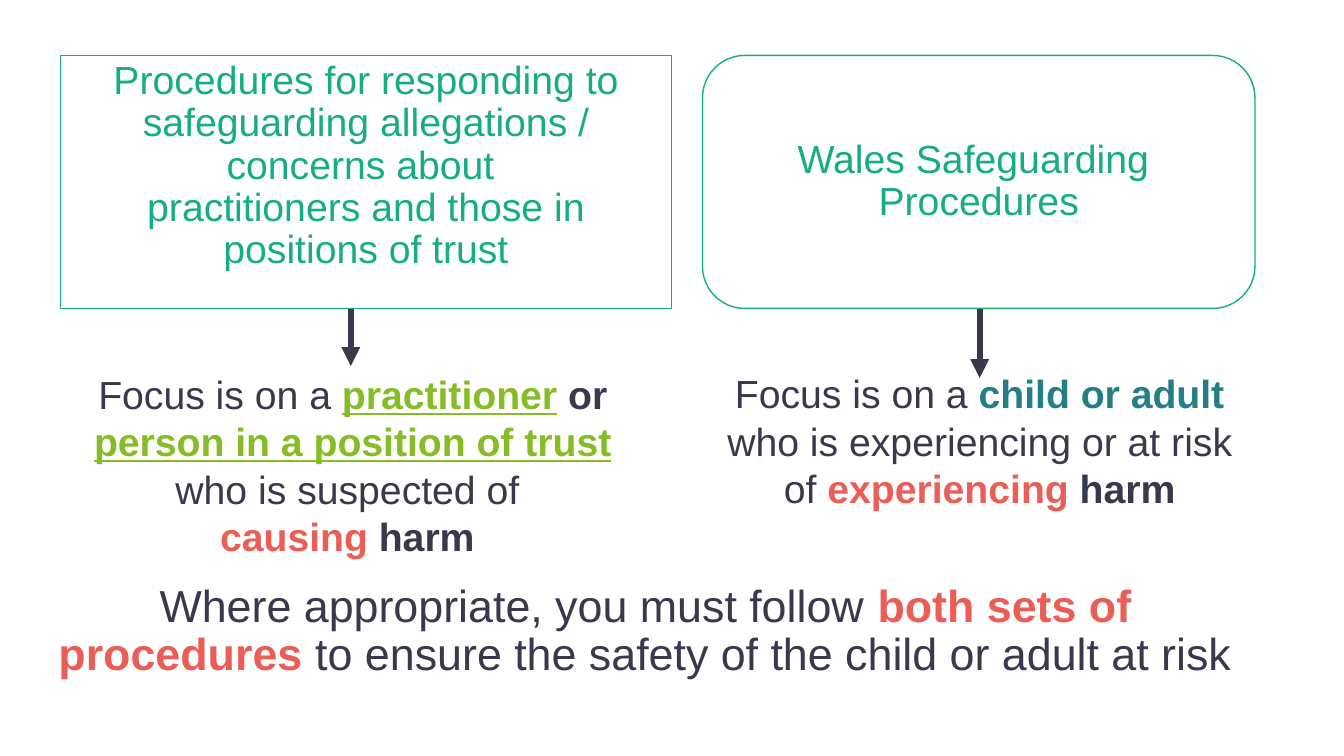
from dataclasses import dataclass

from lxml.etree import SubElement
from pptx import Presentation
from pptx.dml.color import RGBColor
from pptx.enum.shapes import MSO_CONNECTOR, MSO_SHAPE
from pptx.enum.text import MSO_ANCHOR, PP_ALIGN
from pptx.oxml.ns import qn
from pptx.util import Pt

INK, GREEN, LIME, TEAL, RED = "37394C", "16AD85", "86BC25", "257D86", "EB5E57"


@dataclass
class Span:
    text: str
    color: str = INK
    bold: bool = False
    underline: bool = False


@dataclass
class Box:
    left: float
    top: float
    width: float
    height: float

    def lengths(self) -> tuple:
        return Pt(self.left), Pt(self.top), Pt(self.width), Pt(self.height)


@dataclass
class Note:
    box: Box
    spans: list[Span]
    size: float = 28
    line_spacing: float = 1.0


@dataclass
class Arrow:
    x: float
    top: float
    bottom: float


NOTES = [
    Note(Box(25.2, 413.3, 871.9, 142.6), [
        Span("Where appropriate, you must follow "),
        Span("both sets of procedures ", RED, True),
        Span("to ensure the safety of the child or adult at risk"),
    ], size=32, line_spacing=0.9),
    Note(Box(54, 261.2, 396, 143.3), [
        Span("Focus is on a "),
        Span("practitioner", LIME, True, True),
        Span(" ", TEAL, True),
        Span("or ", INK, True),
        Span("person in a position of trust ", LIME, True, True),
        Span("who is suspected of \n"),
        Span("causing", RED, True),
        Span(" harm ", INK, True),
    ]),
    Note(Box(501.8, 260.6, 396, 108.7), [
        Span("Focus is on a "),
        Span("child or adult ", TEAL, True),
        Span("who is experiencing or at risk of "),
        Span("experiencing", RED, True),
        Span(" harm", INK, True),
    ]),
]
ARROWS = [Arrow(250.6, 209.5, 261.4), Arrow(699.8, 169.2, 270)]
TITLE_BOX = Box(43.2, 39.6, 436.3, 180.7)
WALES_BOX = Box(501.8, 39.6, 394.6, 180.7)


def rgb(color: str) -> RGBColor:
    return RGBColor.from_string(color)


def write(tf, spans: list[Span], *, size: float = 28, line_spacing: float = 1.0,
          space_after: float = 0, anchor=MSO_ANCHOR.TOP) -> None:
    tf.word_wrap = True
    tf.vertical_anchor = anchor
    p = tf.paragraphs[0]
    p.alignment = PP_ALIGN.CENTER
    p.line_spacing = line_spacing
    p.space_before = Pt(0)
    p.space_after = Pt(space_after)
    for span in spans:
        for i, part in enumerate(span.text.split("\n")):
            if i:
                p.add_line_break()
            if not part:
                continue
            r = p.add_run()
            r.text = part
            r.font.name = "Arial"
            r.font.size = Pt(size)
            r.font.bold = span.bold
            r.font.underline = span.underline
            r.font.color.rgb = rgb(span.color)
    for br in p._p.findall(qn("a:br")):
        SubElement(br, qn("a:rPr"), sz=str(size * 100))


def add_note(s, note: Note) -> None:
    tb = s.shapes.add_textbox(*note.box.lengths())
    write(tb.text_frame, note.spans, size=note.size,
          line_spacing=note.line_spacing, space_after=12)


def add_arrow(s, arrow: Arrow) -> None:
    c = s.shapes.add_connector(MSO_CONNECTOR.STRAIGHT, Pt(arrow.x), Pt(arrow.top),
                               Pt(arrow.x), Pt(arrow.bottom))
    c.line.color.rgb = rgb(INK)
    c.line.width = Pt(4.5)
    SubElement(c.line._get_or_add_ln(), qn("a:tailEnd"), type="triangle")
    SubElement(c._element.spPr, qn("a:effectLst"))


def format_heading(sp, text: str, anchor) -> None:
    sp.fill.solid()
    sp.fill.fore_color.rgb = rgb("FFFFFF")
    sp.line.color.rgb = rgb(GREEN)
    sp.line.width = Pt(1)
    write(sp.text_frame, [Span(text, GREEN)], line_spacing=0.9, anchor=anchor)


def main() -> None:
    prs = Presentation()
    prs.slide_width, prs.slide_height = Pt(960), Pt(540)
    s = prs.slides.add_slide(prs.slide_layouts[5])
    for note in NOTES:
        add_note(s, note)
    for arrow in ARROWS:
        add_arrow(s, arrow)

    wales = s.shapes.add_shape(MSO_SHAPE.ROUNDED_RECTANGLE, *WALES_BOX.lengths())
    wales.shadow.inherit = False
    format_heading(wales, "Wales Safeguarding \nProcedures", MSO_ANCHOR.MIDDLE)

    title = s.shapes.title
    title.left, title.top, title.width, title.height = TITLE_BOX.lengths()
    format_heading(title, "Procedures for responding to safeguarding allegations / "
                   "concerns about \npractitioners and those in positions of trust",
                   MSO_ANCHOR.TOP)
    s.shapes._spTree.append(title._element)
    prs.save("out.pptx")


if __name__ == "__main__":
    main()
